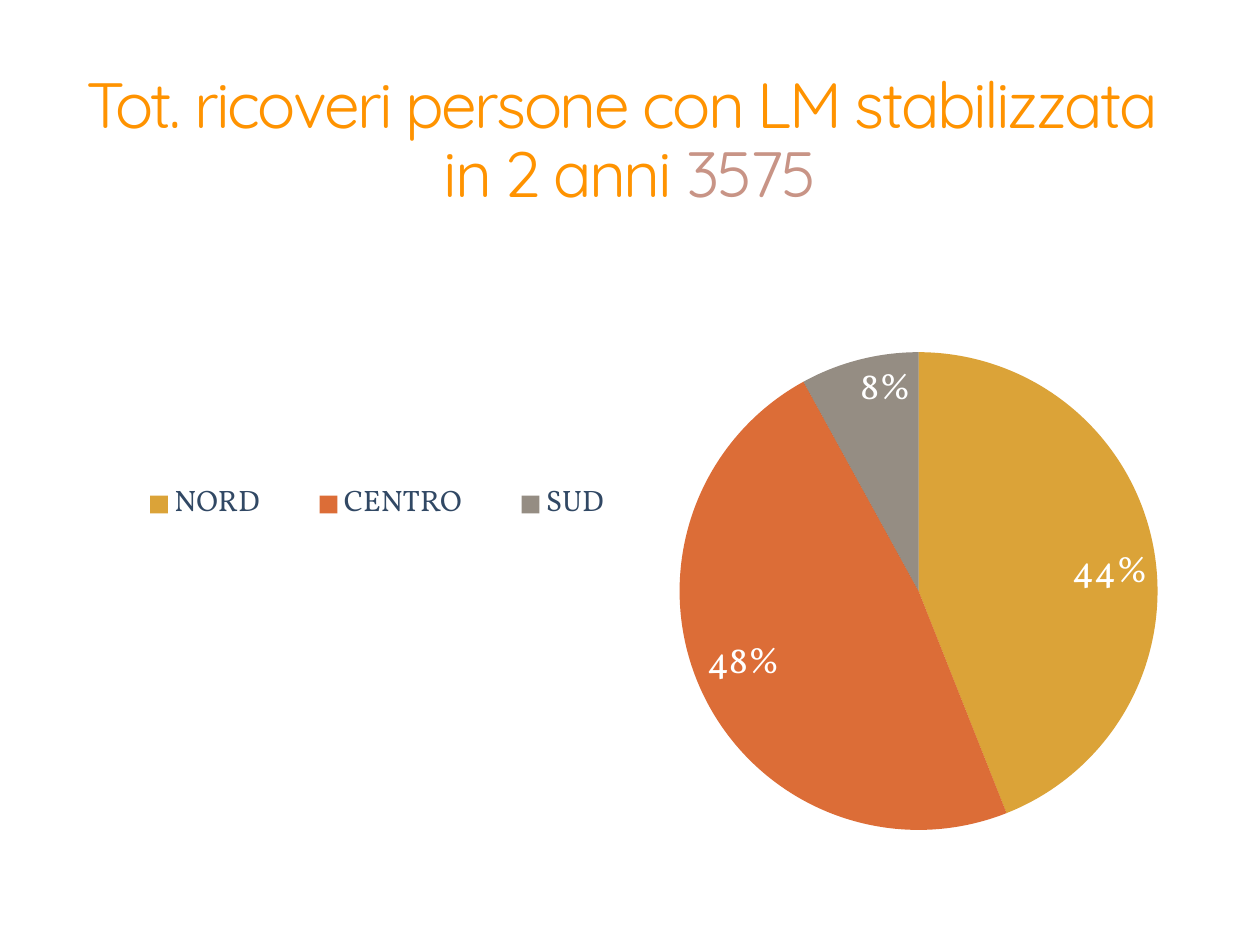
from dataclasses import dataclass

from lxml.etree import SubElement
from pptx import Presentation
from pptx.chart.chart import Chart
from pptx.chart.data import CategoryChartData
from pptx.dml.color import RGBColor
from pptx.enum.chart import XL_CHART_TYPE, XL_LABEL_POSITION, XL_LEGEND_POSITION
from pptx.enum.text import MSO_ANCHOR, MSO_AUTO_SIZE, PP_ALIGN
from pptx.oxml.ns import qn
from pptx.slide import Slide
from pptx.util import Inches, Pt


@dataclass(frozen=True)
class Theme:
    title: str = "FF9300"
    total: str = "C89486"
    legend: str = "314864"
    label: str = "FFFFFF"
    head_font: str = "Quicksand"
    body_font: str = "Vollkorn"
    head_size: int = 52
    label_size: int = 30
    legend_size: int = 24


@dataclass(frozen=True)
class Slice:
    name: str
    value: int
    color: str
    alpha: int


THEME = Theme()
SLICES = [
    Slice("NORD", 44, "D38C07", 80),
    Slice("CENTRO", 48, "D44906", 80),
    Slice("SUD", 8, "554838", 62),
]


def style(font, *, name: str, size: int, color: str) -> None:
    font.name = name
    font.size = Pt(size)
    font.bold = False
    font.color.rgb = RGBColor.from_string(color)


def add_text(para, text: str, *, color: str, space: int = -2) -> None:
    """Add a title run; space is the letter spacing in points."""
    run = para.add_run()
    run.text = text
    style(run.font, name=THEME.head_font, size=THEME.head_size, color=color)
    run.font._element.set("spc", str(space * 100))


def add_title(slide: Slide) -> None:
    title = slide.shapes.title
    title.left, title.top = Inches(0.39), Inches(0.49)
    title.width, title.height = Inches(13.44), Inches(2.24)
    frame = title.text_frame
    frame.word_wrap = True
    frame.auto_size = MSO_AUTO_SIZE.NONE
    frame.vertical_anchor = MSO_ANCHOR.MIDDLE
    frame.margin_left = frame.margin_right = Inches(0.06)
    frame.margin_top = frame.margin_bottom = Inches(0.06)
    para = frame.paragraphs[0]
    para.alignment = PP_ALIGN.CENTER
    para.line_spacing = 0.9
    add_text(para, "Tot. ricoveri persone con LM stabilizzata ", color=THEME.title)
    para.add_line_break()
    add_text(para, "in 2 anni ", color=THEME.title)
    add_text(para, "3575", color=THEME.total)


def place(chart: Chart, tag: str, index: int, inner: bool, **box: float) -> None:
    """Fix a chart part at x, y, w, h, given as fractions of the chart."""
    part = chart.element.xpath(f"//c:{tag}")[0]
    for old in part.findall(qn("c:layout")):
        part.remove(old)
    layout = SubElement(part, qn("c:layout"))
    part.insert(index, layout)
    manual = SubElement(layout, qn("c:manualLayout"))
    if inner:
        SubElement(manual, qn("c:layoutTarget"), val="inner")
    for key in "xy":
        SubElement(manual, qn(f"c:{key}Mode"), val="edge")
    for key, value in box.items():
        SubElement(manual, qn(f"c:{key}"), val=str(value))


def add_pie(slide: Slide) -> None:
    data = CategoryChartData()
    data.categories = [part.name for part in SLICES]
    data.add_series("Series 1", [part.value for part in SLICES])
    chart = slide.shapes.add_chart(
        XL_CHART_TYPE.PIE, Inches(0.63), Inches(3.95), Inches(12.5), Inches(5.46), data
    ).chart
    chart.has_title = False
    style(chart.font, name=THEME.body_font, size=THEME.legend_size, color=THEME.legend)

    plot = chart.plots[0]
    plot.vary_by_categories = True
    points = plot.series[0].points
    for index, part in enumerate(SLICES):
        look = points[index].format
        look.fill.solid()
        look.fill.fore_color.rgb = RGBColor.from_string(part.color)
        look.line.fill.background()
    colors = chart.element.xpath("//c:dPt//a:srgbClr")
    for node, part in zip(colors, SLICES):
        SubElement(node, qn("a:alpha"), val=str(part.alpha * 1000))

    plot.has_data_labels = True
    labels = plot.data_labels
    labels.show_percentage = True
    labels.show_value = False
    labels.number_format = "0%"
    labels.number_format_is_linked = False
    labels.position = XL_LABEL_POSITION.INSIDE_END
    style(labels.font, name=THEME.body_font, size=THEME.label_size, color=THEME.label)

    chart.has_legend = True
    legend = chart.legend
    legend.position = XL_LEGEND_POSITION.RIGHT
    legend.include_in_layout = True
    style(legend.font, name=THEME.body_font, size=THEME.legend_size, color=THEME.legend)
    place(chart, "plotArea", 0, True, x=0.563, y=0.005, w=0.432, h=0.988)
    place(chart, "legend", 1, False, x=0.04, y=0.26, w=0.5, h=0.12)


def main() -> None:
    deck = Presentation()
    deck.slide_width, deck.slide_height = Inches(14.22), Inches(10.67)
    slide = deck.slides.add_slide(deck.slide_layouts[5])
    add_pie(slide)
    add_title(slide)
    deck.save("out.pptx")


if __name__ == "__main__":
    main()
